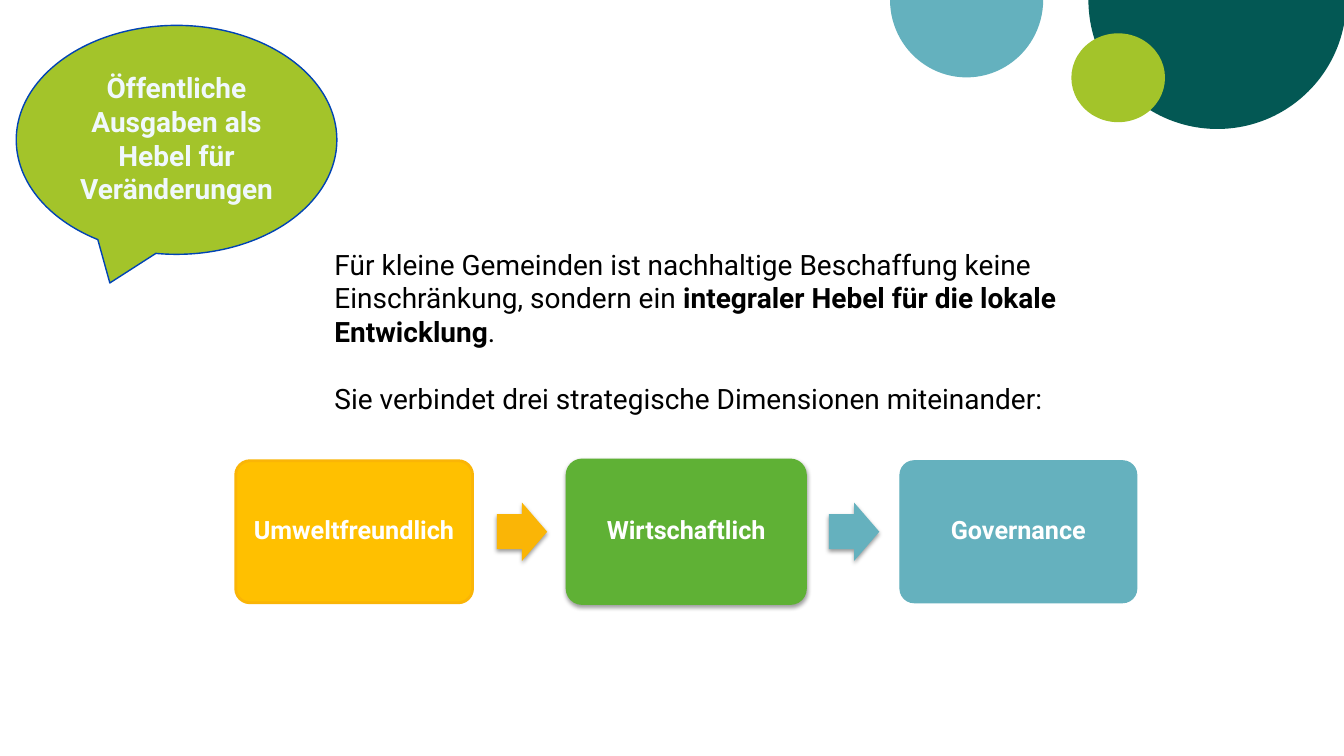
from lxml import etree
from pptx import Presentation
from pptx.dml.color import RGBColor
from pptx.enum.shapes import MSO_SHAPE as Shape
from pptx.enum.text import MSO_ANCHOR as Anchor, MSO_AUTO_SIZE as AutoSize, PP_ALIGN as Align
from pptx.oxml import parse_xml
from pptx.oxml.ns import nsdecls, qn
from pptx.util import Cm, Pt

FONT = "Roboto"
BLACK = RGBColor(0x00, 0x00, 0x00)
WHITE = RGBColor(0xFF, 0xFF, 0xFF)
ICE = RGBColor(0xF0, 0xF8, 0xFC)
BLUE = RGBColor(0x00, 0x43, 0xB5)
PETROL = RGBColor(0x03, 0x58, 0x54)
AQUA = RGBColor(0x64, 0xB1, 0xBE)
TEAL = RGBColor(0x65, 0xB1, 0xBE)
LIME = RGBColor(0xA3, 0xC4, 0x2A)
GREEN = RGBColor(0x5F, 0xB1, 0x35)
YELLOW = RGBColor(0xFF, 0xC0, 0x00)
AMBER = RGBColor(0xFA, 0xB5, 0x06)

TITLE = "Öffentliche Ausgaben als Hebel für Veränderungen"
# Each paragraph is a list of (text, bold)
INTRO = [
    [("Für kleine Gemeinden ist nachhaltige Beschaffung keine Einschränkung, sondern ein ", False),
     ("integraler Hebel für die lokale Entwicklung", True),
     (".", False)],
    [("Sie verbindet drei strategische Dimensionen miteinander:", False)],
]
# label, fill, outline, outline width in points, shadow
DIMENSIONS = [
    ("Umweltfreundlich", YELLOW, AMBER, 2, False),
    ("Wirtschaftlich", GREEN, GREEN, 3, True),
    ("Governance", TEAL, TEAL, 0.75, False),
]
ARROW_COLORS = [AMBER, TEAL]
# preset, left, top, width, height in cm, adjustments, fill
CIRCLES = [
    (Shape.PIE, 27.43, -3.25, 6.5, 6.5, (0, 107.96), PETROL),
    (Shape.PIE, 22.43, -1.96, 3.86, 3.91, (0, 108.52), AQUA),
    (Shape.OVAL, 27, 0.84, 2.36, 2.24, (), LIME),
]
BOX_LEFT, BOX_TOP, BOX_WIDTH, BOX_HEIGHT, BOX_PITCH = 5.94, 11.61, 5.97, 3.58, 8.37
ARROW_OFFSET, ARROW_WIDTH, ARROW_HEIGHT = 6.58, 1.27, 1.47


def add_filled(preset, left, top, width, height, fill, adjustments=()):
    shape = slide.shapes.add_shape(preset, Cm(left), Cm(top), Cm(width), Cm(height))
    shape.shadow.inherit = False
    shape.fill.solid()
    shape.fill.fore_color.rgb = fill
    shape.line.fill.background()
    for index, value in enumerate(adjustments):
        shape.adjustments[index] = value
    return shape


def set_outline(shape, color, width):
    shape.line.color.rgb = color
    shape.line.width = Pt(width)


def add_soft_shadow(shape):
    effects = shape._element.spPr.find(qn("a:effectLst"))
    shadow = parse_xml(
        f'<a:outerShdw {nsdecls("a")} blurRad="{Pt(3.1)}" dist="{Pt(1.6)}" dir="5400000" rotWithShape="0"/>')
    color = etree.SubElement(shadow, qn("a:srgbClr"), val=str(BLACK))
    etree.SubElement(color, qn("a:alpha"), val="38000")
    effects.append(shadow)


def add_run(paragraph, text, size, color, bold):
    run = paragraph.add_run()
    run.text = text
    run.font.name = FONT
    run.font.size = Pt(size)
    run.font.bold = bold
    run.font.color.rgb = color


presentation = Presentation()
presentation.slide_width, presentation.slide_height = Cm(33.87), Cm(19.05)
slide = presentation.slides.add_slide(presentation.slide_layouts[5])
title = slide.shapes.title

for preset, left, top, width, height, adjustments, fill in CIRCLES:
    add_filled(preset, left, top, width, height, fill, adjustments)

bubble = add_filled(Shape.OVAL_CALLOUT, 0.41, 0.64, 8.08, 5.77, LIME, (-0.208, 0.625))
set_outline(bubble, BLUE, 1)

# The title sits on the speech bubble
bubble._element.addnext(title._element)
title.left, title.top, title.width, title.height = Cm(1.59), Cm(1.44), Cm(5.72), Cm(4.08)
frame = title.text_frame
frame.auto_size = AutoSize.NONE
frame.word_wrap = True
frame.vertical_anchor = Anchor.MIDDLE
frame.paragraphs[0].alignment = Align.CENTER
add_run(frame.paragraphs[0], TITLE, 20, ICE, True)

intro = slide.shapes.add_textbox(Cm(8.18), Cm(6.1), Cm(19.76), Cm(4.52))
frame = intro.text_frame
frame.word_wrap = True
for index, runs in enumerate(INTRO):
    paragraph = frame.add_paragraph() if index else frame.paragraphs[0]
    if index:
        paragraph.space_before = Pt(24)
    for text, bold in runs:
        add_run(paragraph, text, 20, BLACK, bold)

for index, (label, fill, outline, line_width, has_shadow) in enumerate(DIMENSIONS):
    box = add_filled(Shape.ROUNDED_RECTANGLE, BOX_LEFT + index * BOX_PITCH, BOX_TOP,
                     BOX_WIDTH, BOX_HEIGHT, fill, (0.1,))
    set_outline(box, outline, line_width)
    if has_shadow:
        add_soft_shadow(box)
    frame = box.text_frame
    frame.word_wrap = True
    frame.vertical_anchor = Anchor.MIDDLE
    frame.margin_left = frame.margin_right = frame.margin_top = frame.margin_bottom = Cm(0.18)
    paragraph = frame.paragraphs[0]
    paragraph.alignment = Align.CENTER
    paragraph.line_spacing = 0.9
    add_run(paragraph, label, 18, WHITE, True)

for index, color in enumerate(ARROW_COLORS):
    arrow = add_filled(Shape.RIGHT_ARROW, BOX_LEFT + index * BOX_PITCH + ARROW_OFFSET,
                       BOX_TOP + (BOX_HEIGHT - ARROW_HEIGHT) / 2,
                       ARROW_WIDTH, ARROW_HEIGHT, color, (0.6, 0.5))
    add_soft_shadow(arrow)

presentation.save("out.pptx")
